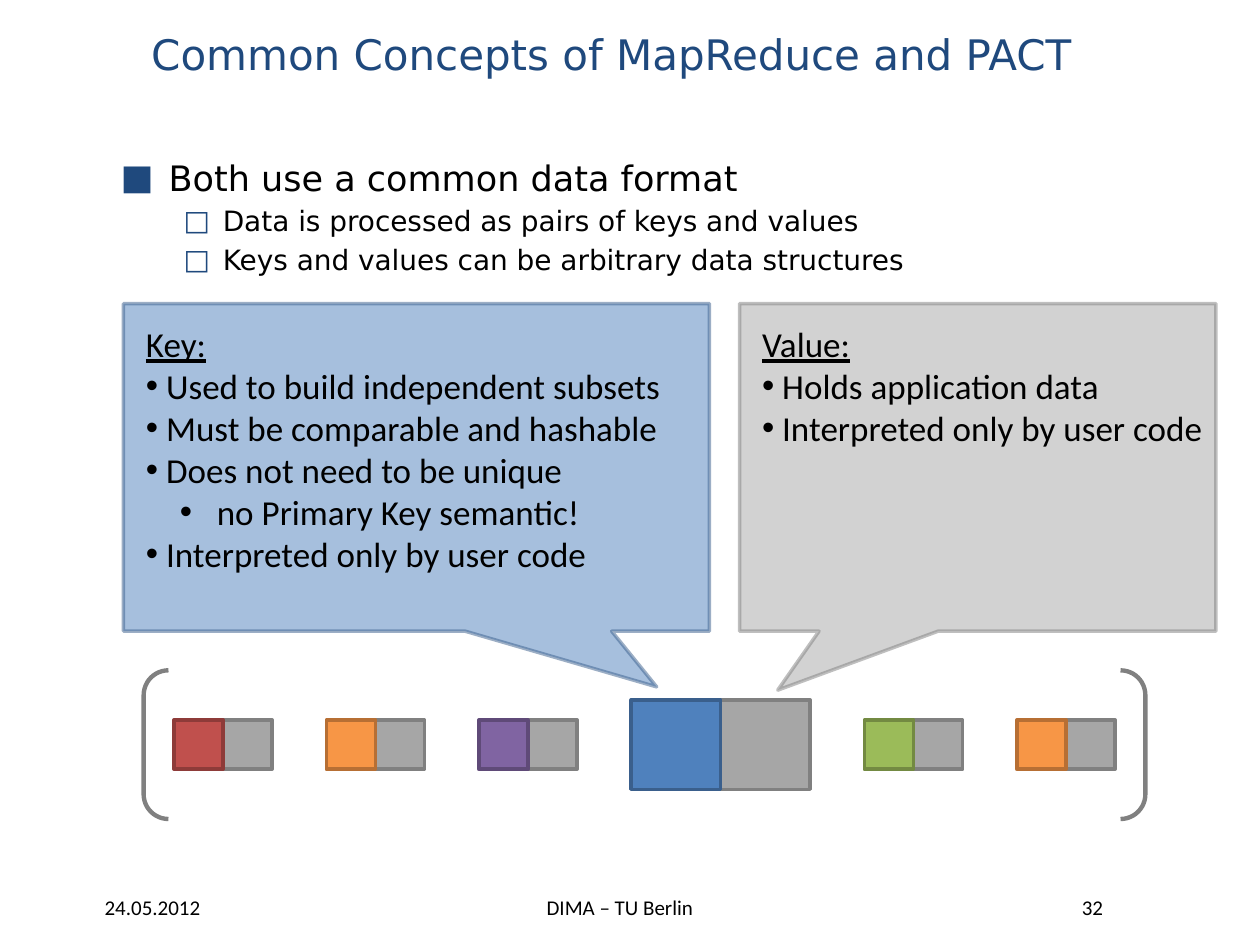
import pptx
import pptx.util
import pptx.dml.color
import pptx.enum.shapes
import pptx.enum.text
from lxml import etree
from pptx.oxml.ns import qn

Inches = pptx.util.Inches
Pt = pptx.util.Pt
RGB = pptx.dml.color.RGBColor.from_string
SHAPE = pptx.enum.shapes.MSO_SHAPE
ALIGN = pptx.enum.text.PP_ALIGN
ANCHOR = pptx.enum.text.MSO_ANCHOR
FIT = pptx.enum.text.MSO_AUTO_SIZE

HEX = {
    "navy": "1F497D", "black": "000000",
    "gray": "A6A6A6", "gray edge": "808080",
    "blue": "4F81BD", "blue edge": "3A5F8C",
    "red": "C0504D", "red edge": "8E3B39",
    "orange": "F79646", "orange edge": "B76F34",
    "purple": "8064A2", "purple edge": "5F4A78",
    "green": "9BBB59", "green edge": "738A42",
}


def write(para, text, face, size, color="black", mark=None, left=0, hang=0, under=None):
    """Fill a paragraph with one run and, if given, a bullet sign."""
    if mark:
        props = para._p.get_or_add_pPr()
        props.set("marL", str(Inches(left)))
        props.set("indent", str(Inches(-hang)))
        if mark != "•":
            tint = etree.SubElement(props, qn("a:buClr"))
            etree.SubElement(tint, qn("a:srgbClr"), val=HEX["navy"])
        etree.SubElement(props, qn("a:buFont"), typeface="Arial" if mark == "•" else face)
        etree.SubElement(props, qn("a:buChar"), char=mark)
    run = para.add_run()
    run.text = text
    look = {"name": face, "size": Pt(size), "underline": under}
    for key, value in look.items():
        setattr(run.font, key, value)
    run.font.color.rgb = RGB(HEX[color])


def draw(kind, x, y, w, h, fill, edge, width=2, alpha=None):
    shape = slide.shapes.add_shape(kind, Inches(x), Inches(y), Inches(w), Inches(h))
    shape.shadow.inherit = False
    if fill:
        shape.fill.solid()
        shape.fill.fore_color.rgb = RGB(HEX[fill])
    else:
        shape.fill.background()
    shape.line.color.rgb = RGB(HEX[edge])
    shape.line.width = Pt(width)
    if alpha:
        for tone in shape._element.spPr.iter(qn("a:srgbClr")):
            etree.SubElement(tone, qn("a:alpha"), val=str(alpha * 1000))
    return shape


deck = pptx.Presentation()
deck.slide_width, deck.slide_height = Inches(10), Inches(7.5)
slide = deck.slides.add_slide(deck.slide_layouts[5])

# Title
title = slide.shapes.title
place = {"left": 1.1, "top": 0.08, "width": 8.55, "height": 0.7}
for key, value in place.items():
    setattr(title, key, Inches(value))
frame = title.text_frame
frame.auto_size = FIT.NONE
frame.vertical_anchor = ANCHOR.MIDDLE
frame.paragraphs[0].alignment = ALIGN.LEFT
write(frame.paragraphs[0], "Common Concepts of MapReduce and PACT", "DejaVu Sans", 24, "navy")

# Main points
body = slide.shapes.add_textbox(Inches(0.86), Inches(1.19), Inches(8.75), Inches(1.3))
frame = body.text_frame
frame.word_wrap = True
write(frame.paragraphs[0], "Both use a common data format", "DejaVu Sans", 20,
      mark="■", left=0.38, hang=0.38)
for text in ["Data is processed as pairs of keys and values",
             "Keys and values can be arbitrary data structures"]:
    para = frame.add_paragraph()
    para.level = 1
    para.space_before = Pt(3.2)
    write(para, text, "DejaVu Sans", 16, mark="□", left=0.81, hang=0.31)

# Row of key/value pairs, centred on one line
x, mid, gap = 1.38, 5.91, 0.43
pairs = [("red", 0.39), ("orange", 0.39), ("purple", 0.39),
         ("blue", 0.71), ("green", 0.39), ("orange", 0.39)]
for color, side in pairs:
    top = mid - side / 2
    draw(SHAPE.RECTANGLE, x + side, top, side, side, "gray", "gray edge")
    draw(SHAPE.RECTANGLE, x, top, side, side, color, color + " edge")
    x += 2 * side + gap
draw(SHAPE.DOUBLE_BRACKET, 1.14, 5.32, 7.95, 1.18, None, "gray edge", 2.5)

# Callouts: left, width, colour, tip, text box width and height, heading, points
calls = [
    (0.98, 4.65, "blue", (0.41, 0.67), 4.32, 2.12, "Key:",
     [(0, " Used to build independent subsets"),
      (0, " Must be comparable and hashable"),
      (0, " Does not need to be unique"),
      (1, " no Primary Key semantic!"),
      (0, " Interpreted only by user code")]),
    (5.87, 3.78, "gray", (-0.42, 0.68), 3.94, 1.41, "Value:",
     [(0, " Holds application data"),
      (0, " Interpreted only by user code")]),
]
for left, width, color, tip, wide, high, head, points in calls:
    call = draw(SHAPE.RECTANGULAR_CALLOUT, left, 2.41, width, 2.6,
                color, color + " edge", alpha=50)
    call.adjustments[0], call.adjustments[1] = tip
    box = slide.shapes.add_textbox(Inches(left + 0.08), Inches(2.51), Inches(wide), Inches(high))
    frame = box.text_frame
    frame.word_wrap = False
    write(frame.paragraphs[0], head, "Calibri", 20, under=True)
    for level, text in points:
        para = frame.add_paragraph()
        para.level = level
        write(para, text, "Calibri", 20, mark="•", left=0.5 * level, hang=0.23 * level)

# Footer
for left, width, text in [(0.47, 1.48, "24.05.2012"),
                          (3.67, 2.5, "DIMA – TU Berlin"),
                          (7.81, 1.72, "32")]:
    foot = slide.shapes.add_textbox(Inches(left), Inches(7.05), Inches(width), Inches(0.3))
    frame = foot.text_frame
    frame.word_wrap = True
    frame.vertical_anchor = ANCHOR.MIDDLE
    frame.paragraphs[0].alignment = ALIGN.CENTER
    write(frame.paragraphs[0], text, "Calibri", 12)

deck.save("out.pptx")
